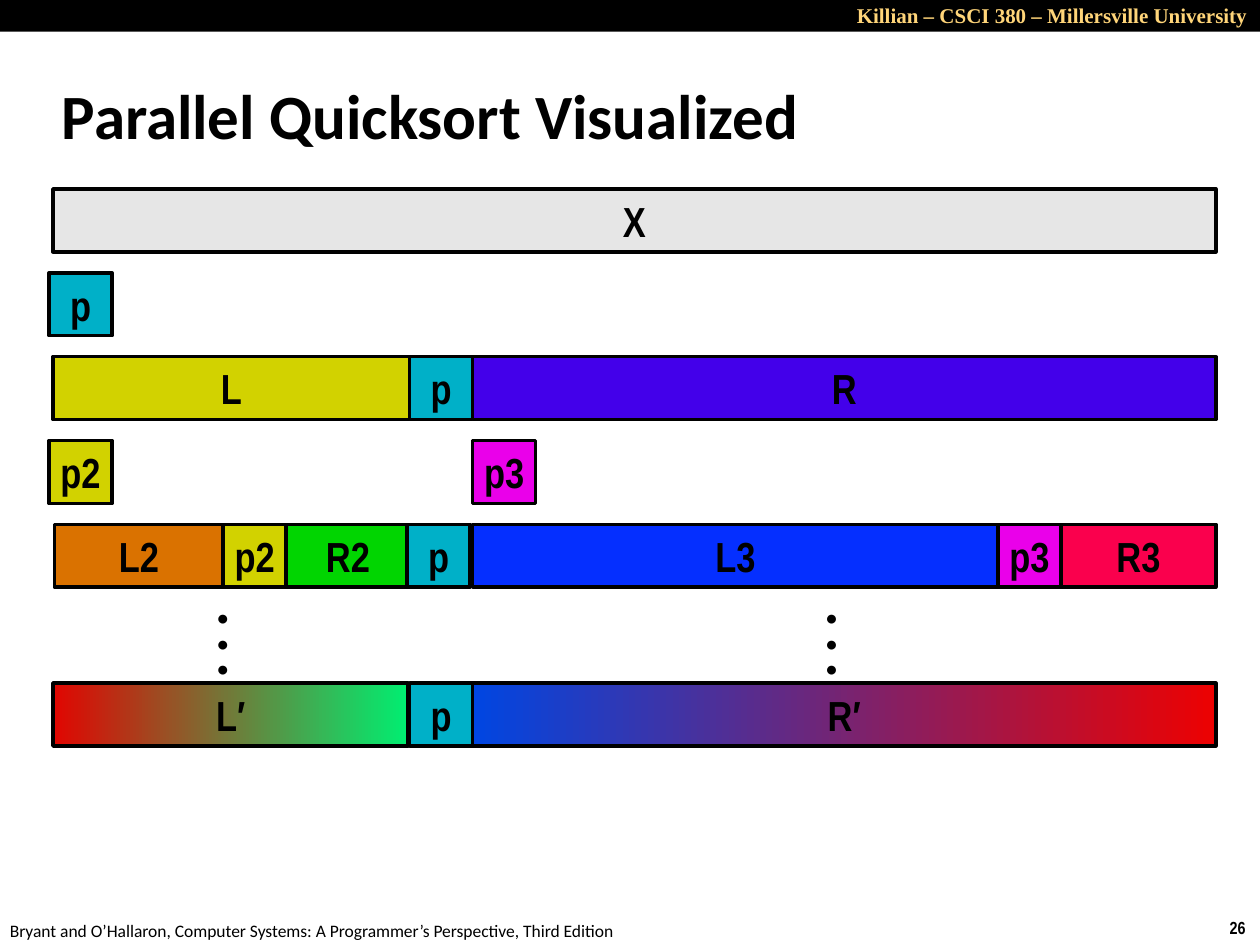
from pptx import Presentation
from pptx.dml.color import RGBColor
from pptx.enum.shapes import MSO_SHAPE
from pptx.enum.text import MSO_ANCHOR, PP_ALIGN
from pptx.util import Cm, Pt

RECTANGLE = MSO_SHAPE.RECTANGLE
MIDDLE = MSO_ANCHOR.MIDDLE
LEFT, CENTER, RIGHT = PP_ALIGN.LEFT, PP_ALIGN.CENTER, PP_ALIGN.RIGHT
TITLE_ONLY = 5

# Colours
BLACK, WHITE, GOLD, GRAY = "000000", "FFFFFF", "FFD579", "E6E6E6"
TEAL, YELLOW, MAGENTA, VIOLET = "00B0C8", "D2D200", "EA00EA", "4300EA"
ORANGE, GREEN, BLUE, CRIMSON = "DA7200", "01D501", "052FFF", "FA004D"
LEFT_SORTED = ("E10601", "00EE71")
RIGHT_SORTED = ("0046E2", "ED0101")

# Array geometry in centimetres
CELL = 1.27
START, PIVOT, RIGHT_PART, END = 1.07, 8.26, 9.53, 24.51
PICK_LEFT = 0.99
FIRST_ROW, ROW_STEP, LAST_ROW = 3.81, 1.69, 13.77


def color(code):
    return RGBColor.from_string(code)


def write(frame, text, font="Calibri", size=10, bold=False, ink=BLACK,
          align=LEFT, wrap=False):
    """Fill a text frame, one paragraph per line of text."""
    frame.word_wrap = wrap
    for number, line in enumerate(text.split("\n")):
        para = frame.add_paragraph() if number else frame.paragraphs[0]
        para.alignment = align
        span = para.add_run()
        span.text = line
        span.font.name = font
        span.font.size = Pt(size)
        span.font.bold = bold
        span.font.color.rgb = color(ink)


def add_text(page, left, top, width, height, text, **style):
    box = page.shapes.add_textbox(Cm(left), Cm(top), Cm(width), Cm(height))
    write(box.text_frame, text, **style)


def add_box(page, left, top, width, height, fill):
    """Add a plain rectangle; a pair of colours makes a gradient."""
    box = page.shapes.add_shape(
        RECTANGLE, Cm(left), Cm(top), Cm(width), Cm(height))
    box.shadow.inherit = False
    if isinstance(fill, tuple):
        box.fill.gradient()
        box.fill.gradient_angle = 0
        for stop, code in zip(box.fill.gradient_stops, fill):
            stop.color.rgb = color(code)
    else:
        box.fill.solid()
        box.fill.fore_color.rgb = color(fill)
    box.line.fill.background()
    return box


def add_part(page, left, top, text, fill, right=None):
    """Add one labelled part of the array, one cell wide by default."""
    width = right - left if right else CELL
    box = add_box(page, left, top, width, CELL, fill)
    box.line.color.rgb = color(BLACK)
    box.line.width = Pt(2)
    box.text_frame.vertical_anchor = MIDDLE
    write(box.text_frame, text, font="Arial Narrow", size=24, bold=True,
          align=CENTER)


def add_title(page, text):
    title = page.shapes.title
    title.left, title.top = Cm(0.99), Cm(1.24)
    title.width, title.height = Cm(21.08), Cm(2.11)
    title.text_frame.vertical_anchor = MIDDLE
    write(title.text_frame, text, size=36, bold=True, wrap=True)


def add_frame(page):
    """Add the header band, the source line and the page number."""
    add_text(page, 24.54, 18.36, 0.86, 0.69, "26", font="Arial Narrow",
             bold=True)
    add_text(page, -0.05, 18.42, 12.9, 0.69,
             "Bryant and O’Hallaron, Computer Systems: "
             "A Programmer’s Perspective, Third Edition")
    add_box(page, 0, 0, 25.4, 0.64, BLACK)
    add_text(page, 11.43, -0.08, 13.97, 0.76,
             "Killian – CSCI 380 – Millersville University",
             font="Times New Roman", size=12, bold=True, ink=GOLD,
             align=RIGHT, wrap=True)


def main():
    deck = Presentation()
    deck.slide_width, deck.slide_height = Cm(25.4), Cm(19.05)
    page = deck.slides.add_slide(deck.slide_layouts[TITLE_ONLY])
    page.background.fill.solid()
    page.background.fill.fore_color.rgb = color(WHITE)
    add_frame(page)
    add_title(page, "Parallel Quicksort Visualized")

    # Each row is one step: (left, label, fill, right edge if not one cell)
    steps = [
        [(START, "X", GRAY, END)],
        [(PICK_LEFT, "p", TEAL)],
        [(START, "L", YELLOW, PIVOT), (PIVOT, "p", TEAL),
         (RIGHT_PART, "R", VIOLET, END)],
        [(PICK_LEFT, "p2", YELLOW), (RIGHT_PART, "p3", MAGENTA)],
        [(4.5, "p2", YELLOW), (1.1, "L2", ORANGE, 4.5),
         (5.77, "R2", GREEN, PIVOT), (RIGHT_PART, "L3", BLUE, 20.12),
         (21.39, "R3", CRIMSON, END), (20.12, "p3", MAGENTA),
         (8.21, "p", TEAL)],
    ]
    for number, parts in enumerate(steps):
        for left, text, fill, *right in parts:
            add_part(page, left, FIRST_ROW + number * ROW_STEP, text, fill,
                     *right)

    # Dots for the steps left out, then the sorted array
    for left in (4.14, 16.41):
        add_text(page, left, 12.07, 0.71, 1.8, "•\n•\n•", size=12, bold=True)
    add_part(page, START, LAST_ROW, "L′", LEFT_SORTED, 8.23)
    add_part(page, RIGHT_PART, LAST_ROW, "R′", RIGHT_SORTED, END)
    add_part(page, PIVOT, LAST_ROW, "p", TEAL)

    deck.save("out.pptx")


if __name__ == "__main__":
    main()
